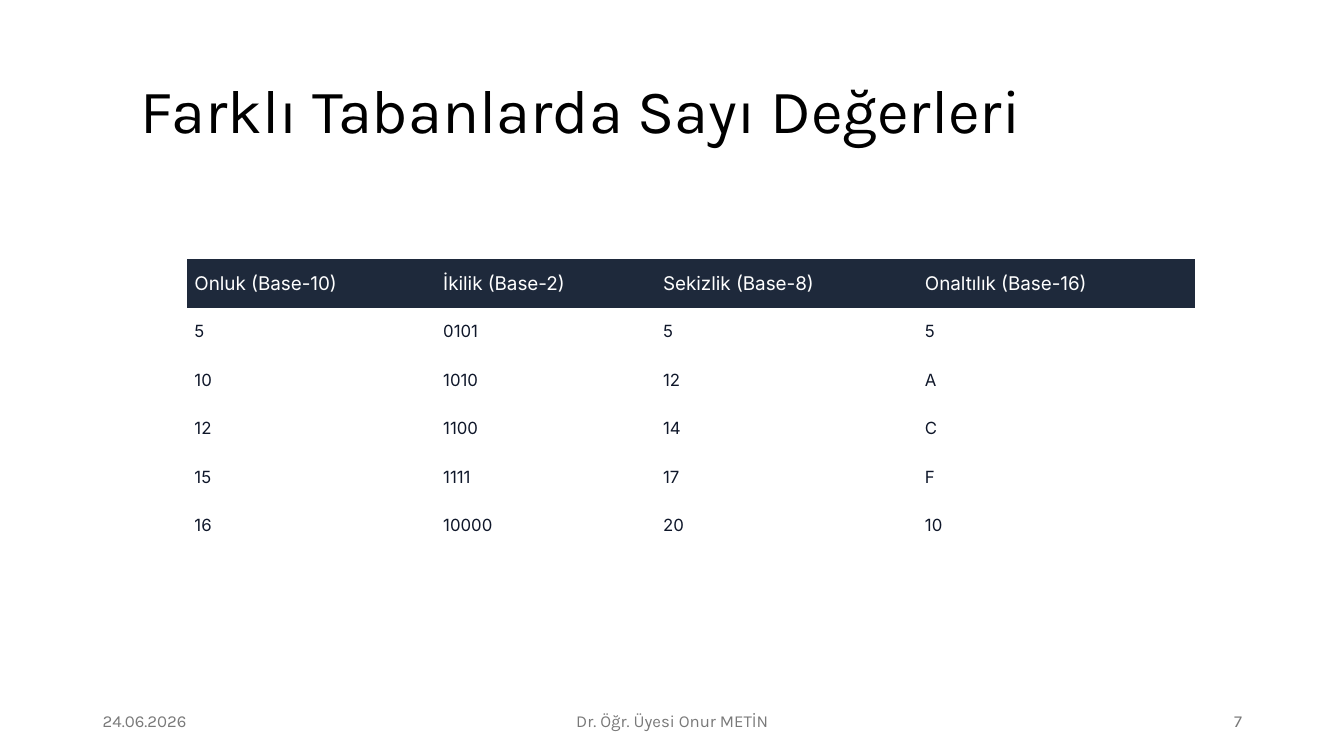
from dataclasses import dataclass
from typing import Any

from pptx import Presentation
from pptx.dml.color import RGBColor as Rgb
from pptx.enum.text import MSO_ANCHOR as Anchor, PP_ALIGN as Align
from pptx.oxml.ns import qn
from pptx.util import Cm, Pt


@dataclass(frozen=True)
class Theme:
    title: Rgb = Rgb(0x00, 0x00, 0x00)
    foot: Rgb = Rgb(0x79, 0x79, 0x79)
    band: Rgb = Rgb(0x1E, 0x29, 0x3B)
    head: Rgb = Rgb(0xFF, 0xFF, 0xFF)
    body: Rgb = Rgb(0x0F, 0x17, 0x2A)
    main: str = "Karla"
    grid: str = "Inter"
    title_pt: float = 44
    foot_pt: float = 12
    head_pt: float = 13.5
    body_pt: float = 12


@dataclass(frozen=True)
class Label:
    text: str
    left: float
    top: float
    width: float
    height: float
    size: float
    color: Rgb
    align: Align = Align.LEFT
    lines: float = 1.0


@dataclass(frozen=True)
class Base:
    name: str
    form: str  # number format of the base
    width: float


THEME = Theme()
FOOT = dict(top=17.65, height=1.02, size=THEME.foot_pt, color=THEME.foot)
LABELS = [
    Label("Farklı Tabanlarda Sayı Değerleri", 3.3, 1.02, 28.24, 3.68,
          THEME.title_pt, THEME.title, lines=0.9),
    Label("24.06.2026", 2.34, width=7.62, **FOOT),
    Label("Dr. Öğr. Üyesi Onur METİN", 11.23, width=11.43,
          align=Align.CENTER, **FOOT),
    Label("7", 23.93, width=7.62, align=Align.RIGHT, **FOOT),
]
BASES = [
    Base("Onluk (Base-10)", "d", 6.27),
    Base("İkilik (Base-2)", "04b", 5.54),
    Base("Sekizlik (Base-8)", "o", 6.6),
    Base("Onaltılık (Base-16)", "X", 6.99),
]
VALUES = [5, 10, 12, 15, 16]
ROW = 1.22
PLAIN = "{2D5ABB26-0587-4C30-8999-92F81FD0307C}"  # no style, no grid
CELL = dict(margin_left=Cm(0.18), margin_right=Cm(0.18),
            margin_top=Cm(0.08), margin_bottom=Cm(0.08),
            vertical_anchor=Anchor.MIDDLE)


def apply(item: Any, form: dict[str, Any]) -> None:
    for key, value in form.items():
        setattr(item, key, value)


def style(run: Any, name: str, size: float, color: Rgb) -> None:
    apply(run.font, dict(name=name, size=Pt(size), bold=False))
    run.font.color.rgb = color


def add_label(slide: Any, label: Label) -> None:
    box = slide.shapes.add_textbox(Cm(label.left), Cm(label.top),
                                   Cm(label.width), Cm(label.height))
    frame = box.text_frame
    apply(frame, dict(word_wrap=True, vertical_anchor=Anchor.MIDDLE))
    para = frame.paragraphs[0]
    apply(para, dict(alignment=label.align, line_spacing=label.lines))
    run = para.add_run()
    run.text = label.text
    style(run, THEME.main, label.size, label.color)


def fill_cell(cell: Any, text: str, head: bool) -> None:
    apply(cell, CELL)
    run = cell.text_frame.paragraphs[0].add_run()
    run.text = text
    if head:
        cell.fill.solid()
        cell.fill.fore_color.rgb = THEME.band
        style(run, THEME.grid, THEME.head_pt, THEME.head)
    else:
        cell.fill.background()
        style(run, THEME.grid, THEME.body_pt, THEME.body)


def add_grid(slide: Any) -> None:
    rows = [[base.name for base in BASES]]
    rows += [[format(n, base.form) for base in BASES] for n in VALUES]
    width = sum(base.width for base in BASES)
    table = slide.shapes.add_table(len(rows), len(BASES), Cm(4.72), Cm(6.53),
                                   Cm(width), Cm(ROW * len(rows))).table
    table.horz_banding = False
    table._tbl.tblPr.find(qn("a:tableStyleId")).text = PLAIN
    for col, base in zip(table.columns, BASES):
        col.width = Cm(base.width)
    for r, row in enumerate(rows):
        table.rows[r].height = Cm(ROW)
        for c, text in enumerate(row):
            fill_cell(table.cell(r, c), text, head=r == 0)


def main() -> None:
    deck = Presentation()
    apply(deck, dict(slide_width=Cm(33.87), slide_height=Cm(19.05)))
    slide = deck.slides.add_slide(deck.slide_layouts[6])

    # Title and footer
    for label in LABELS:
        add_label(slide, label)

    # Number table
    add_grid(slide)

    deck.save("out.pptx")


if __name__ == "__main__":
    main()
